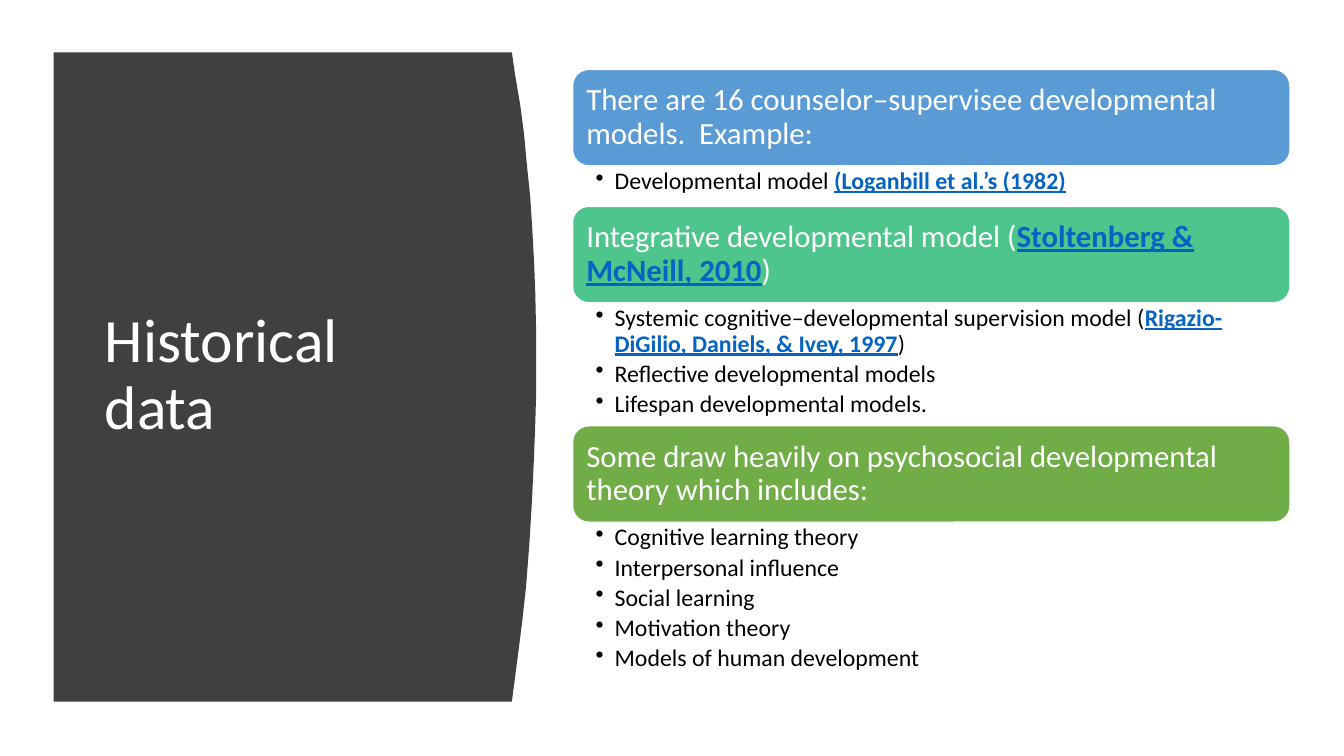
"""Build the slide on the history of developmental supervision models."""
from pptx import Presentation
from pptx.dml.color import RGBColor
from pptx.enum.shapes import MSO_SHAPE
from pptx.enum.text import MSO_ANCHOR, PP_ALIGN
from pptx.oxml.xmlchemy import OxmlElement
from pptx.util import Cm, Pt

ROUNDED = MSO_SHAPE.ROUNDED_RECTANGLE
MIDDLE, TOP = MSO_ANCHOR.MIDDLE, MSO_ANCHOR.TOP
LEFT = PP_ALIGN.LEFT

TITLE = ("Historical data",)
# Within each line, every second piece is a citation.
SECTIONS = [
    {
        "heading": ("There are 16 counselor–supervisee developmental models.  Example:",),
        "color": "5B9BD5",
        "points": [("Developmental model ", "(Loganbill et al.’s (1982)")],
        "points_height": 1.02,
    },
    {
        "heading": ("Integrative developmental model (", "Stoltenberg & McNeill, 2010", ")"),
        "color": "4DC58D",
        "points": [
            ("Systemic cognitive–developmental supervision model (",
             "Rigazio-DiGilio, Daniels, & Ivey, 1997", ")"),
            ("Reflective developmental models",),
            ("Lifespan developmental models.",),
        ],
        "points_height": 3.1,
    },
    {
        "heading": ("Some draw heavily on psychosocial developmental theory which includes:",),
        "color": "70AD47",
        "points": [
            ("Cognitive learning theory",),
            ("Interpersonal influence",),
            ("Social learning",),
            ("Motivation theory",),
            ("Models of human development",),
        ],
        "points_height": 4.04,
    },
]

WHITE, BLACK, PANEL_COLOR, CITATION_COLOR = "FFFFFF", "000000", "404040", "0563C1"
PANEL_LEFT = 1.35
PANEL_EDGE = [
    (12.9, 1.32), (12.98, 1.88), (13.11, 2.64), (13.21, 3.4), (13.28, 4.17),
    (13.36, 4.93), (13.41, 5.69), (13.46, 6.6), (13.49, 7.37), (13.51, 8.26),
    (13.51, 10), (13.49, 10.67), (13.46, 11.48), (13.41, 12.57), (13.34, 13.72),
    (13.26, 14.76), (13.16, 15.67), (13.06, 16.46), (12.98, 17.07), (12.9, 17.68),
]
TITLE_BOX = (2.39, 2.82, 9.3, 13.31)
LIST_LEFT, LIST_TOP, LIST_WIDTH, HEADING_HEIGHT = 14.43, 1.75, 18.08, 2.43
BULLET_INDENT = 0.48

TITLE_STYLE = {"size": 44, "color": WHITE, "anchor": MIDDLE,
               "insets": (0.25, 0.13, 0.25, 0.13), "after": 0}
HEADING_STYLE = {"size": 22, "color": WHITE, "anchor": MIDDLE,
                 "insets": (0.23, 0.23, 0.23, 0.23), "after": 0}
POINT_STYLE = {"size": 17, "color": BLACK, "anchor": TOP,
               "insets": (0.58, 0.08, 0.43, 0.08), "after": 3.2, "bullet": "•"}


def rgb(code):
    return RGBColor.from_string(code)


def set_all(target, values):
    for name, value in values.items():
        setattr(target, name, value)


def paint(shape, color):
    shape.shadow.inherit = False
    shape.fill.solid()
    shape.fill.fore_color.rgb = rgb(color)


def add_bullet(paragraph, character):
    properties = paragraph._p.get_or_add_pPr()
    properties.set("marL", str(Cm(BULLET_INDENT)))
    properties.set("indent", str(-Cm(BULLET_INDENT)))
    bullet = OxmlElement("a:buChar")
    bullet.set("char", character)
    properties.append(bullet)


def write(shape, lines, style):
    frame = shape.text_frame
    left, top, right, bottom = (Cm(inset) for inset in style["insets"])
    set_all(frame, {"word_wrap": True, "vertical_anchor": style["anchor"],
                    "margin_left": left, "margin_top": top,
                    "margin_right": right, "margin_bottom": bottom})
    for number, pieces in enumerate(lines):
        paragraph = frame.add_paragraph() if number else frame.paragraphs[0]
        set_all(paragraph, {"alignment": LEFT, "line_spacing": 0.9,
                            "space_before": Pt(0), "space_after": Pt(style["after"])})
        if "bullet" in style:
            add_bullet(paragraph, style["bullet"])
        for position, piece in enumerate(pieces):
            citation = position % 2 == 1
            run = paragraph.add_run()
            run.text = piece
            set_all(run.font, {"name": "Calibri", "size": Pt(style["size"]),
                               "bold": citation, "underline": citation})
            run.font.color.rgb = rgb(CITATION_COLOR if citation else style["color"])


def add_panel(shapes):
    top, bottom = PANEL_EDGE[0][1], PANEL_EDGE[-1][1]
    outline = [(Cm(x), Cm(y)) for x, y in PANEL_EDGE + [(PANEL_LEFT, bottom)]]
    builder = shapes.build_freeform(Cm(PANEL_LEFT), Cm(top))
    builder.add_line_segments(outline, close=True)
    panel = builder.convert_to_shape()
    paint(panel, PANEL_COLOR)
    panel.line.fill.background()


def add_sections(shapes):
    top = LIST_TOP
    for section in SECTIONS:
        heading = shapes.add_shape(ROUNDED, Cm(LIST_LEFT), Cm(top),
                                   Cm(LIST_WIDTH), Cm(HEADING_HEIGHT))
        paint(heading, section["color"])
        heading.line.color.rgb = rgb(WHITE)
        heading.line.width = Pt(1)
        write(heading, [section["heading"]], HEADING_STYLE)
        top += HEADING_HEIGHT
        points = shapes.add_textbox(Cm(LIST_LEFT), Cm(top), Cm(LIST_WIDTH),
                                    Cm(section["points_height"]))
        write(points, section["points"], POINT_STYLE)
        top += section["points_height"]


def main():
    deck = Presentation()
    set_all(deck, {"slide_width": Cm(33.87), "slide_height": Cm(19.05)})
    shapes = deck.slides.add_slide(deck.slide_layouts[6]).shapes
    add_panel(shapes)
    title = shapes.add_textbox(*(Cm(length) for length in TITLE_BOX))
    write(title, [TITLE], TITLE_STYLE)
    add_sections(shapes)
    deck.save("out.pptx")


if __name__ == "__main__":
    main()
